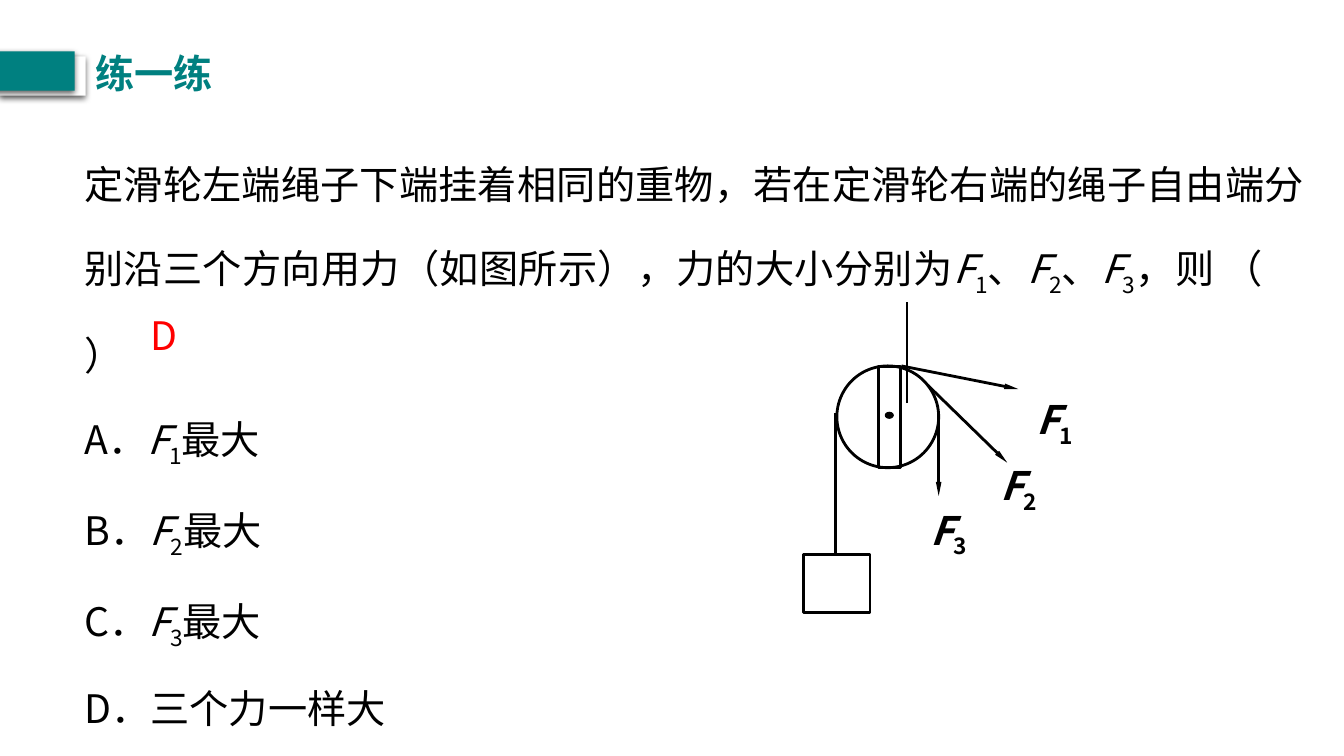
import dataclasses

import lxml.etree
import pptx
import pptx.dml.color
import pptx.enum.shapes
import pptx.enum.text
import pptx.oxml.ns
import pptx.util

Inches = pptx.util.Inches
Pt = pptx.util.Pt
SHAPE = pptx.enum.shapes.MSO_SHAPE
JUSTIFY = pptx.enum.text.PP_ALIGN.JUSTIFY
LEFT = pptx.enum.text.PP_ALIGN.LEFT
qn = pptx.oxml.ns.qn


@dataclasses.dataclass
class Theme:
    font: str = "Noto Sans CJK SC"
    size: int = 28
    ink: str = "000000"
    paper: str = "FFFFFF"
    accent: str = "008080"
    answer: str = "FF0000"
    line: float = 2
    thin_line: float = 1.5
    line_spacing: float = 1.7


def color(value):
    return pptx.dml.color.RGBColor.from_string(value)


def force(number):
    """Runs of a force symbol: italic F with a subscript number."""
    return [("F", "italic"), (str(number), "subscript")]


def bezier(start, first, second, end, steps=10):
    """Points along a cubic curve, without its start."""
    for step in range(1, steps + 1):
        t = step / steps
        weights = ((1 - t) ** 3, 3 * t * (1 - t) ** 2, 3 * t * t * (1 - t), t ** 3)
        yield tuple(sum(weight * point[axis] for weight, point in
                        zip(weights, (start, first, second, end))) for axis in (0, 1))


class SlideBuilder:
    def __init__(self, slide, theme):
        self.slide = slide
        self.theme = theme

    def text(self, box, paragraphs, ink=None, bold=False, align=LEFT,
             line_spacing=None, tab_stop=None):
        shape = self.slide.shapes.add_textbox(*map(Inches, box))
        frame = shape.text_frame
        frame.word_wrap = True
        for index, runs in enumerate(paragraphs):
            paragraph = frame.add_paragraph() if index else frame.paragraphs[0]
            paragraph.alignment = align
            if line_spacing:
                paragraph.line_spacing = line_spacing
            if tab_stop and index == 0:
                properties = paragraph._p.get_or_add_pPr()
                tabs = lxml.etree.SubElement(properties, qn("a:tabLst"))
                lxml.etree.SubElement(tabs, qn("a:tab"), pos=str(Inches(tab_stop)), algn="l")
            for words, style in runs:
                run = paragraph.add_run()
                run.text = words
                self.format_run(run, style, ink or self.theme.ink, bold)

    def format_run(self, run, style, ink, bold):
        run.font.size = Pt(self.theme.size)
        run.font.bold = bold
        run.font.italic = style == "italic"
        run.font.color.rgb = color(ink)
        run.font.name = self.theme.font
        properties = run._r.get_or_add_rPr()
        properties.set("lang", "zh-CN")
        if style == "subscript":
            properties.set("baseline", "-25000")
        latin = properties.find(qn("a:latin"))
        east_asian = lxml.etree.Element(qn("a:ea"), typeface=self.theme.font)
        latin.addnext(east_asian)

    def shape(self, kind, box, fill=None, line_width=None, shadow=False):
        shape = self.slide.shapes.add_shape(kind, *map(Inches, box))
        self.paint(shape, fill, line_width)
        if shadow:
            effects = shape._element.spPr.find(qn("a:effectLst"))
            outer = lxml.etree.SubElement(
                effects, qn("a:outerShdw"), blurRad=str(Pt(4.5)), dist=str(Pt(1.5)),
                dir="5400000", algn="t", rotWithShape="0")
            tint = lxml.etree.SubElement(outer, qn("a:srgbClr"), val=self.theme.ink)
            lxml.etree.SubElement(tint, qn("a:alpha"), val="63000")

    def paint(self, shape, fill, line_width):
        if fill:
            shape.fill.solid()
            shape.fill.fore_color.rgb = color(fill)
        else:
            shape.fill.background()
        if line_width:
            shape.line.color.rgb = color(self.theme.ink)
            shape.line.width = Pt(line_width)
        else:
            shape.line.fill.background()
        shape.shadow.inherit = False

    def curve(self, points):
        """Open curve through cubic segments: start, then three points each."""
        outline = []
        for index in range(0, len(points) - 1, 3):
            outline.extend(bezier(*points[index:index + 4]))
        builder = self.slide.shapes.build_freeform(*points[0], scale=Inches(1))
        builder.add_line_segments(outline, close=False)
        self.paint(builder.convert_to_shape(), None, self.theme.thin_line)

    def line(self, start, end, arrow=False):
        connector = self.slide.shapes.add_connector(
            pptx.enum.shapes.MSO_CONNECTOR.STRAIGHT, *map(Inches, start + end))
        connector.line.color.rgb = color(self.theme.ink)
        connector.line.width = Pt(self.theme.line)
        if arrow:
            lxml.etree.SubElement(connector.line._get_or_add_ln(), qn("a:tailEnd"),
                                  type="triangle", w="sm", len="lg")
        lxml.etree.SubElement(connector._element.spPr, qn("a:effectLst"))


def main():
    presentation = pptx.Presentation()
    presentation.slide_width = Inches(13.33)
    presentation.slide_height = Inches(7.5)
    theme = Theme()
    builder = SlideBuilder(presentation.slides.add_slide(presentation.slide_layouts[6]), theme)

    # Question and options
    question = [("定滑轮左端绳子下端挂着相同的重物，若在定滑轮右端的绳子自由端分"
                 "别沿三个方向用力（如图所示），力的大小分别为", None),
                *force(1), ("、", None), *force(2), ("、", None), *force(3),
                ("，则 （\t）", None)]
    options = [[(f"{letter}．", None), *force(number), ("最大", None)]
               for number, letter in enumerate("ABC", 1)]
    builder.text((0.74, 1.21, 12.3, 5.71),
                 [question, *options, [("D．三个力一样大", None)]],
                 align=JUSTIFY, line_spacing=theme.line_spacing, tab_stop=1)

    # Pulley: wheel, frame and axle
    builder.shape(SHAPE.OVAL, (8.3, 3.63, 1.01, 1.01), line_width=theme.line)
    builder.shape(SHAPE.RECTANGLE, (8.71, 3.64, 0.22, 1), line_width=theme.line)
    builder.shape(SHAPE.OVAL, (8.78, 4.09, 0.08, 0.06), theme.ink, 0.75)

    # Lower and upper hooks
    builder.curve([(8.81, 4.64), (8.81, 4.68), (8.8, 4.72), (8.81, 4.74),
                   (8.82, 4.77), (8.88, 4.8), (8.88, 4.82),
                   (8.87, 4.84), (8.8, 4.87), (8.77, 4.86),
                   (8.74, 4.86), (8.72, 4.81), (8.71, 4.79)])
    builder.curve([(8.82, 3.63), (8.83, 3.59), (8.83, 3.55), (8.82, 3.53),
                   (8.81, 3.5), (8.75, 3.47), (8.76, 3.45),
                   (8.76, 3.43), (8.84, 3.4), (8.86, 3.41),
                   (8.89, 3.41), (8.92, 3.46), (8.93, 3.48)])

    # Hanging weight and its rope
    builder.shape(SHAPE.RECTANGLE, (7.97, 5.5, 0.66, 0.58), line_width=theme.line)
    builder.line((8.29, 4.1), (8.29, 5.5))

    # Pulling forces: arrow start, arrow end, label corner
    pulls = [((8.94, 3.63), (10.1, 3.86), (10.18, 3.87)),
             ((9.2, 3.82), (9.99, 4.59), (9.83, 4.53)),
             ((9.31, 4.11), (9.31, 4.92), (9.13, 4.97))]
    for number, (start, end, corner) in enumerate(pulls, 1):
        builder.line(start, end, arrow=True)
        builder.text(corner + (1.04, 0.66), [force(number)], bold=True, align=JUSTIFY)

    # Answer
    builder.text((1.39, 3.04, 0.75, 0.57), [[("D", None)]], theme.answer)

    # Heading
    builder.shape(SHAPE.RECTANGLE, (0, 0.56, 0.85, 0.39), theme.paper, shadow=True)
    builder.shape(SHAPE.RECTANGLE, (-0.11, 0.51, 0.85, 0.39), theme.accent, shadow=True)
    builder.text((0.85, 0.44, 3.74, 0.57), [[("练一练", None)]], theme.accent, bold=True)

    presentation.save("out.pptx")


if __name__ == "__main__":
    main()
